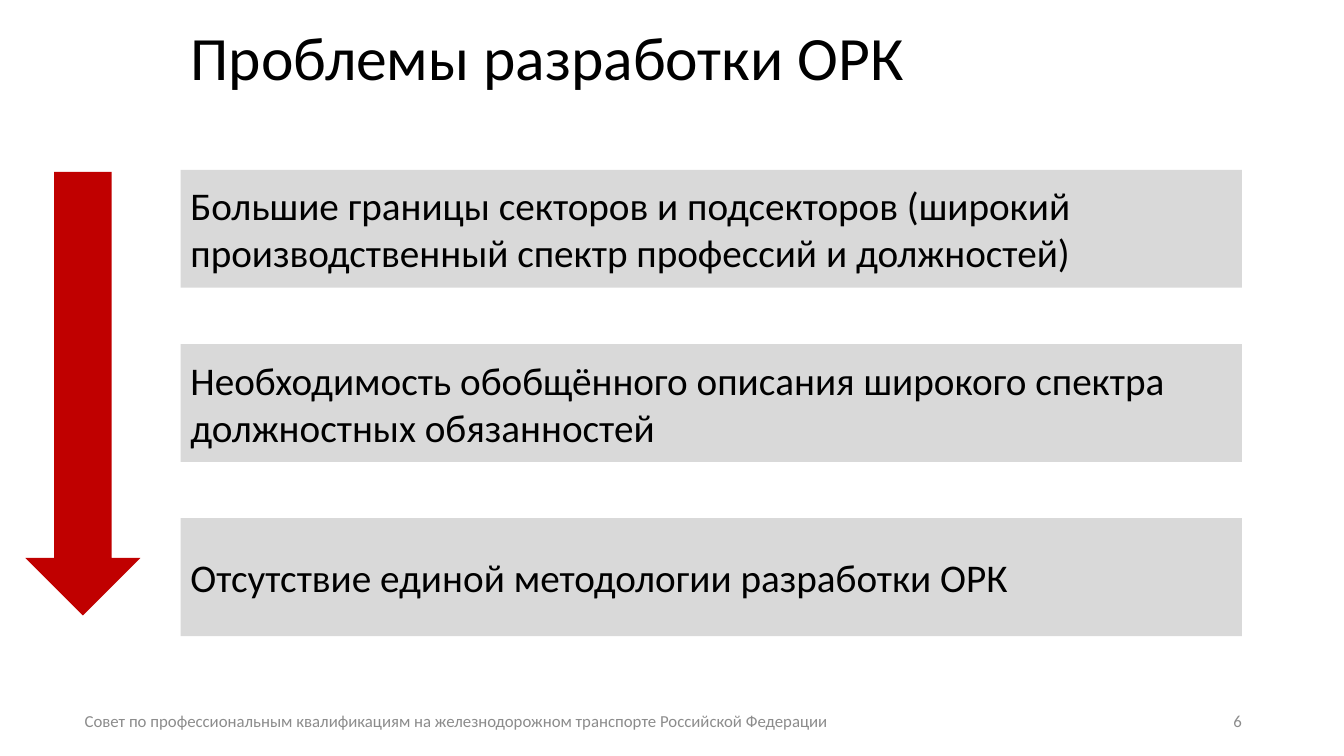
from pptx import Presentation
from pptx.dml.color import RGBColor
from pptx.enum.shapes import MSO_SHAPE
from pptx.enum.text import MSO_ANCHOR, PP_ALIGN
from pptx.util import Cm, Pt

BLACK, RED, LIGHT_GREY, FOOTER_GREY = "000000", "C00000", "D9D9D9", "8C8C8C"

PROBLEMS = [
    "Большие границы секторов и подсекторов (широкий производственный спектр профессий и должностей)",
    "Необходимость обобщённого описания широкого спектра должностных обязанностей",
    "Отсутствие единой методологии разработки ОРК",
]


def color(hex_value):
    return RGBColor.from_string(hex_value)


class SlideBuilder:
    font_name = "Calibri"

    def __init__(self, slide):
        self.slide = slide

    def set_text(self, shape, text, size, hex_value, align=PP_ALIGN.LEFT, line_spacing=1.0):
        """Fill a shape with one vertically centred, wrapped paragraph."""
        frame = shape.text_frame
        frame.word_wrap = True
        frame.vertical_anchor = MSO_ANCHOR.MIDDLE
        paragraph = frame.paragraphs[0]
        paragraph.text = text
        for name, value in {"alignment": align, "line_spacing": line_spacing}.items():
            setattr(paragraph, name, value)
        for name, value in {"name": self.font_name, "size": Pt(size)}.items():
            setattr(paragraph.runs[0].font, name, value)
        paragraph.runs[0].font.color.rgb = color(hex_value)

    def label(self, box, text, size, hex_value, **layout):
        self.set_text(self.slide.shapes.add_textbox(*map(Cm, box)), text, size, hex_value, **layout)

    def block(self, preset, box, fill):
        """Add a preset shape with a plain fill, no outline and no shadow."""
        shape = self.slide.shapes.add_shape(preset, *map(Cm, box))
        shape.shadow.inherit = False
        shape.fill.solid()
        shape.fill.fore_color.rgb = color(fill)
        shape.line.fill.background()
        return shape

    def panel(self, box, text):
        self.set_text(self.block(MSO_SHAPE.RECTANGLE, box, LIGHT_GREY), text, 28, BLACK)


def main():
    deck = Presentation()
    deck.slide_width, deck.slide_height = Cm(33.87), Cm(19.05)
    builder = SlideBuilder(deck.slides.add_slide(deck.slide_layouts[6]))

    content_left = 4.55
    builder.label((content_left, 0.1, 29.21, 2.87), "Проблемы разработки ОРК", 44, BLACK,
                  line_spacing=0.9)

    footer_top, footer_height = 17.65, 1.02
    builder.label((0.38, footer_top, 22.25, footer_height),
                  "Совет по профессиональным квалификациям на железнодорожном транспорте "
                  "Российской Федерации", 12, FOOTER_GREY, align=PP_ALIGN.CENTER)
    builder.label((23.93, footer_top, 7.62, footer_height), "6", 12, FOOTER_GREY,
                  align=PP_ALIGN.RIGHT)

    first_top, pitch = 4.28, 4.39
    for row, problem in enumerate(PROBLEMS):
        builder.panel((content_left, first_top + row * pitch, 26.75, 2.97), problem)

    builder.block(MSO_SHAPE.DOWN_ARROW, (0.64, 4.33, 2.9, 11.18), RED)

    deck.save("out.pptx")


if __name__ == "__main__":
    main()
